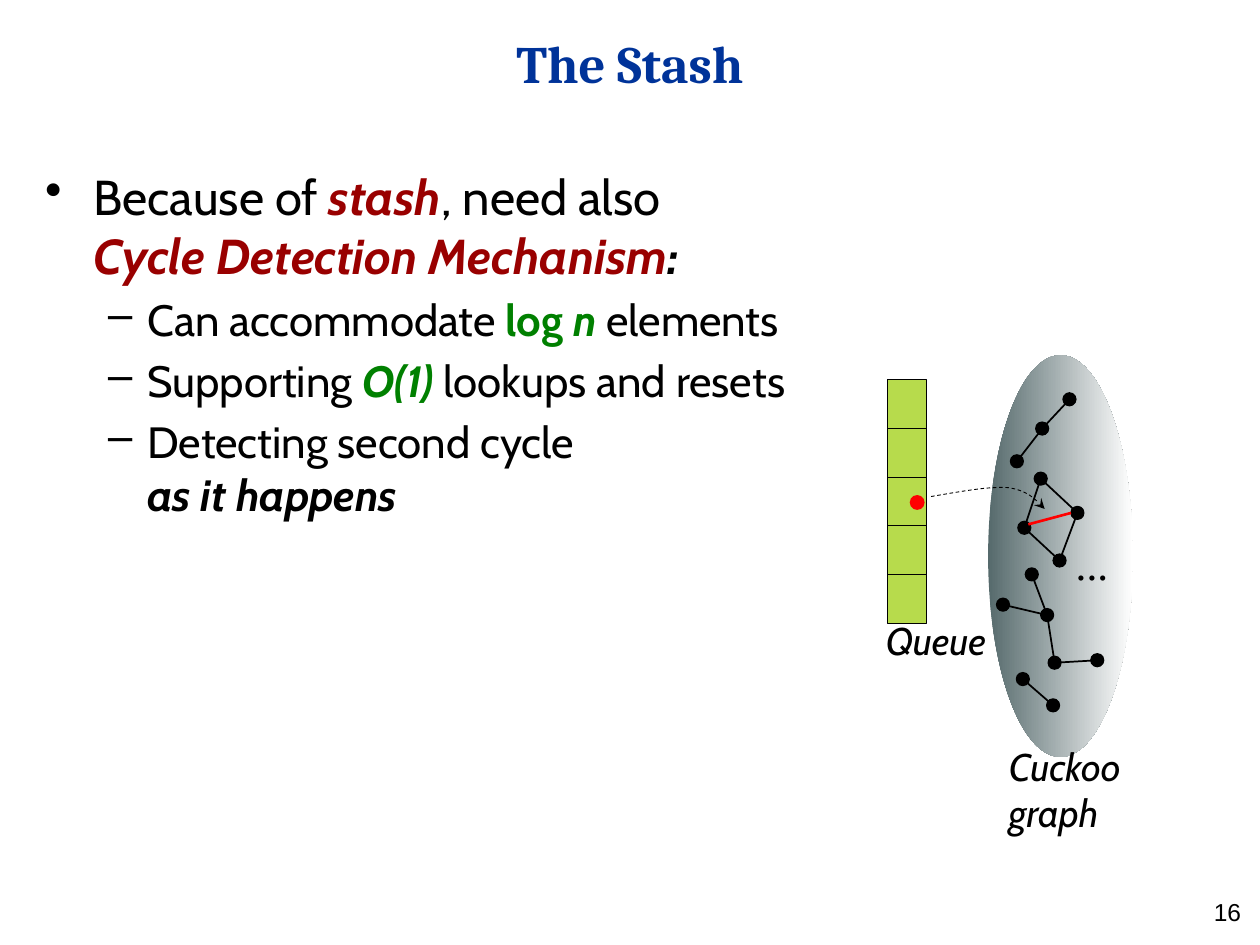
from dataclasses import dataclass

from lxml import etree
from pptx import Presentation
from pptx.dml.color import RGBColor
from pptx.enum.dml import MSO_LINE
from pptx.enum.shapes import MSO_CONNECTOR, MSO_SHAPE
from pptx.enum.text import MSO_ANCHOR, PP_ALIGN
from pptx.oxml.ns import qn
from pptx.util import Cm, Pt

LEFT, CENTER, RIGHT = PP_ALIGN.LEFT, PP_ALIGN.CENTER, PP_ALIGN.RIGHT
TOP, MIDDLE = MSO_ANCHOR.TOP, MSO_ANCHOR.MIDDLE
RECTANGLE, OVAL = MSO_SHAPE.RECTANGLE, MSO_SHAPE.OVAL
STRAIGHT, DASH = MSO_CONNECTOR.STRAIGHT, MSO_LINE.DASH


@dataclass(frozen=True)
class Theme:
    black: str = "000000"
    title: str = "003399"
    term: str = "990000"
    bound: str = "008000"
    cell: str = "99CC00"
    marker: str = "FF0000"
    shade: str = "566A6C"
    light: str = "FFFFFF"
    font: str = "Cabin"
    title_font: str = "Cambria"
    number_font: str = "Arial"
    dots_font: str = "Times New Roman"
    title_size: float = 30
    body_size: float = 28
    item_size: float = 25
    label_size: float = 22
    number_size: float = 14


THEME = Theme()
PLAIN = {"name": THEME.font, "bold": False, "italic": False, "color": THEME.black}
STRONG = {**PLAIN, "bold": True, "italic": True}
TERM = {**STRONG, "color": THEME.term}
BOUND = {**STRONG, "color": THEME.bound}
BOUND_UPRIGHT = {**BOUND, "italic": False}
LABEL = {**PLAIN, "italic": True, "size": THEME.label_size}
DOTS = {**LABEL, "name": THEME.dots_font, "size": THEME.item_size}
TITLE = {**PLAIN, "name": THEME.title_font, "bold": True,
         "color": THEME.title, "size": THEME.title_size}
NUMBER = {**PLAIN, "name": THEME.number_font, "size": THEME.number_size}

BREAK = ("\n", None)
BODY = [
    (0, [("Because of ", PLAIN), ("stash", TERM), (", need also", PLAIN), BREAK,
         ("Cycle Detection Mechanism", TERM), (":", STRONG)]),
    (1, [("Can accommodate ", PLAIN), ("log", BOUND_UPRIGHT), (" n", BOUND),
         (" elements", PLAIN)]),
    (1, [("Supporting ", PLAIN), ("O(1)", BOUND), (" lookups and resets", PLAIN)]),
    (1, [("Detecting second cycle", PLAIN), BREAK, ("as it happens", STRONG)]),
]
LEVELS = [
    {"bullet": "•", "margin": 0.97, "hanging": 0.97, "size": THEME.body_size},
    {"bullet": "–", "margin": 2.06, "hanging": 0.79, "size": THEME.item_size},
]

COMPONENTS = [
    ([(21.11, 12.4), (20.22, 12.19), (20.8, 11.58), (21.26, 13.36), (22.12, 13.31)],
     [(0, 1), (2, 0), (0, 3), (4, 3)]),
    ([(20.5, 9.3), (21.01, 8.64), (21.56, 8.05)], [(0, 1), (1, 2)]),
    ([(20.62, 13.69), (21.23, 14.22)], [(0, 1)]),
    ([(20.98, 9.65), (21.72, 10.34), (21.36, 11.3), (20.65, 10.64)],
     [(2, 3), (3, 0), (2, 1), (0, 1)]),
]
NODE_SIZE = 0.26
CURVES = [
    [(18.77, 10.01), (19.35, 9.91), (19.94, 9.8), (20.32, 9.83)],
    [(20.32, 9.83), (20.7, 9.88), (20.88, 10.06), (21.06, 10.26)],
]
CURVE_STEPS = 8


def add_span(para, text, style):
    span = para.add_run()
    span.text = text
    for key, value in style.items():
        if key == "color":
            span.font.color.rgb = RGBColor.from_string(value)
        else:
            setattr(span.font, key, Pt(value) if key == "size" else value)


def add_box(shapes, place, anchor=TOP):
    box = shapes.add_textbox(*map(Cm, place))
    box.text_frame.word_wrap = True
    box.text_frame.vertical_anchor = anchor
    return box.text_frame


def add_label(shapes, place, lines, style, align=LEFT, anchor=TOP):
    frame = add_box(shapes, place, anchor)
    for index, line in enumerate(lines):
        para = frame.add_paragraph() if index else frame.paragraphs[0]
        para.alignment = align
        add_span(para, line, style)


def add_body(shapes, place):
    frame = add_box(shapes, place)
    for index, (depth, spans) in enumerate(BODY):
        level = LEVELS[depth]
        para = frame.add_paragraph() if index else frame.paragraphs[0]
        para.level = depth
        para.space_before = Pt(0.2 * level["size"])
        properties = para._p.get_or_add_pPr()
        properties.set("marL", str(Cm(level["margin"])))
        properties.set("indent", str(-Cm(level["hanging"])))
        etree.SubElement(properties, qn("a:buChar"), char=level["bullet"])
        for text, style in spans:
            if style is None:
                para.add_line_break()
            else:
                add_span(para, text, {**style, "size": level["size"]})


def set_line(line, color, width):
    line.color.rgb = RGBColor.from_string(color)
    line.width = Pt(width)


def add_figure(shapes, kind, place, color, outline=None, opacity=None):
    figure = shapes.add_shape(kind, *map(Cm, place))
    figure.shadow.inherit = False
    figure.fill.solid()
    figure.fill.fore_color.rgb = RGBColor.from_string(color)
    if opacity:
        shade = figure._element.spPr.find(".//" + qn("a:srgbClr"))
        etree.SubElement(shade, qn("a:alpha"), val=str(opacity * 1000))
    if outline:
        set_line(figure.line, THEME.black, outline)
    else:
        figure.line.fill.background()
    return figure


def add_edge(shapes, start, end, color=THEME.black, width=1):
    edge = shapes.add_connector(STRAIGHT, *map(Cm, (*start, *end)))
    set_line(edge.line, color, width)
    etree.SubElement(edge._element.spPr, qn("a:effectLst"))


def curve_point(controls, t):
    weights = ((1 - t) ** 3, 3 * t * (1 - t) ** 2, 3 * t ** 2 * (1 - t), t ** 3)
    return tuple(Cm(sum(w * c for w, c in zip(weights, axis)))
                 for axis in zip(*controls))


def add_curved_arrow(shapes):
    points = [curve_point(controls, step / CURVE_STEPS)
              for controls in CURVES for step in range(1, CURVE_STEPS + 1)]
    builder = shapes.build_freeform(*map(Cm, CURVES[0][0]))
    builder.add_line_segments(points, close=False)
    arrow = builder.convert_to_shape()
    arrow.shadow.inherit = False
    arrow.fill.background()
    set_line(arrow.line, THEME.black, 0.5)
    arrow.line.dash_style = DASH
    etree.SubElement(arrow.line._get_or_add_ln(), qn("a:tailEnd"), type="stealth")


def add_queue(shapes):
    width, height = 0.77, 0.98
    for row in range(5):
        place = (17.9, 7.66 + row * height, width, height)
        add_figure(shapes, RECTANGLE, place, THEME.cell, 0.5, 70)
    add_label(shapes, (17.27, 12.32, 3.2, 1.19), ["Queue"], LABEL, CENTER)


def add_graph(shapes):
    cloud = add_figure(shapes, OVAL, (19.92, 7.16, 2.92, 8.1), THEME.light)
    cloud.fill.gradient()
    cloud.fill.gradient_angle = 0
    for stop, color in zip(cloud.fill.gradient_stops, (THEME.shade, THEME.light)):
        stop.color.rgb = RGBColor.from_string(color)
    add_label(shapes, (20.09, 14.86, 3.45, 2.11), ["Cuckoo", "graph"], LABEL)
    for nodes, edges in COMPONENTS:
        for x, y in nodes:
            place = (x - NODE_SIZE / 2, y - NODE_SIZE / 2, NODE_SIZE, NODE_SIZE)
            add_figure(shapes, OVAL, place, THEME.black, 0.75)
        for start, end in edges:
            add_edge(shapes, nodes[start], nodes[end])
    add_label(shapes, (21.31, 10.69, 1.45, 1.32), ["..."], DOTS, CENTER)


def main():
    deck = Presentation()
    deck.slide_width, deck.slide_height = Cm(25.4), Cm(19.05)
    page = deck.slides.add_slide(deck.slide_layouts[6])
    shapes = page.shapes
    add_label(shapes, (19.35, 17.96, 5.92, 0.71), ["16"], NUMBER, RIGHT)
    add_label(shapes, (0, 0.2, 25.4, 2.11), ["The Stash"], TITLE, CENTER, MIDDLE)
    add_queue(shapes.add_group_shape().shapes)
    add_graph(shapes.add_group_shape().shapes)
    add_curved_arrow(shapes)
    add_edge(shapes, (20.73, 10.57), (21.59, 10.34), THEME.marker, 1.5)
    add_figure(shapes, OVAL, (18.34, 9.98, 0.3, 0.3), THEME.marker)
    add_body(shapes, (0.66, 3.23, 24.74, 11.58))
    deck.save("out.pptx")


if __name__ == "__main__":
    main()
